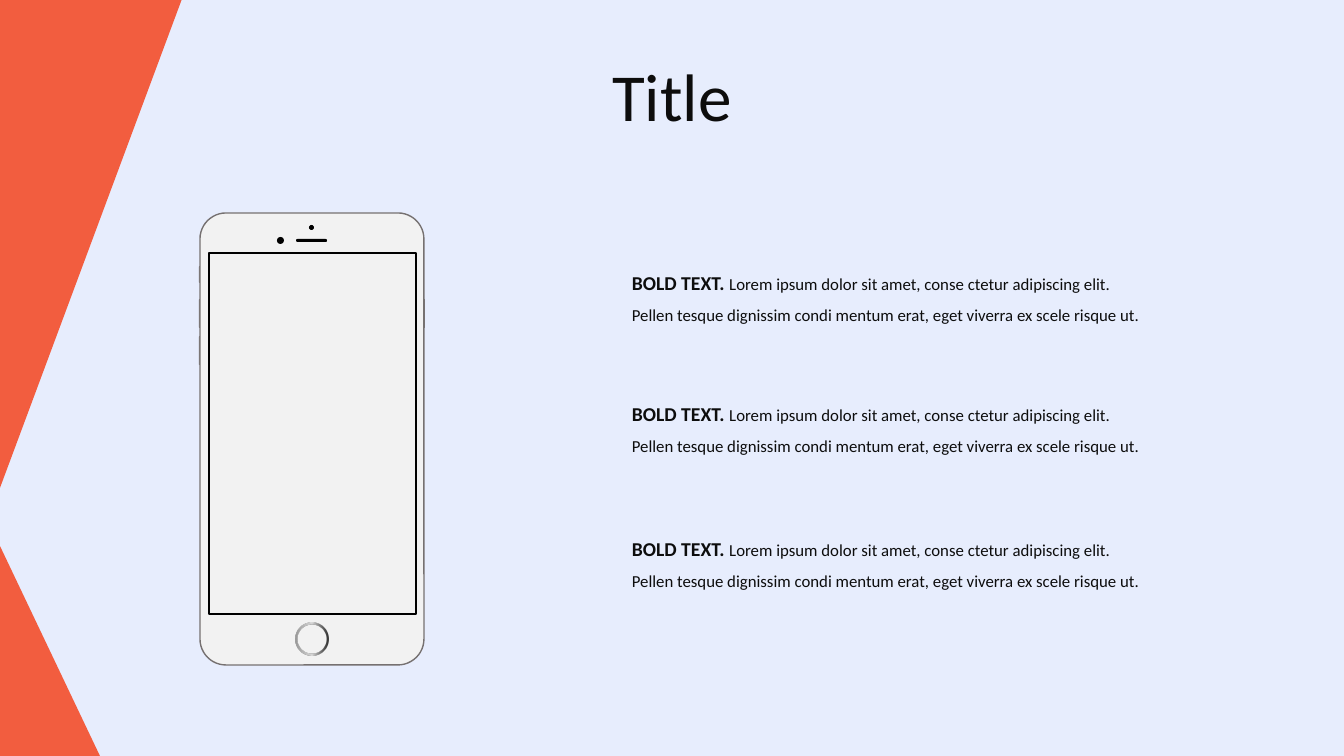
from lxml.etree import SubElement
from pptx import Presentation
from pptx.dml.color import RGBColor
from pptx.enum.shapes import MSO_SHAPE as SHAPE
from pptx.enum.text import MSO_ANCHOR as ANCHOR, MSO_AUTO_SIZE as AUTO_SIZE, PP_ALIGN as ALIGN
from pptx.oxml.ns import qn
from pptx.util import Pt

PX = 914400 / 100.8
CORAL, INK, BLACK = "F25D3F", "0D0D0D", "000000"
RIM, CASE = "767171", "F2F2F2"
LEAD = "BOLD TEXT. "
DETAIL = ("Lorem ipsum dolor sit amet, conse ctetur adipiscing elit. "
          "Pellen tesque dignissim condi mentum erat, eget viverra ex scele risque ut.")


def emu(*lengths):
    return [round(length * PX) for length in lengths]


def color(hex_string):
    return RGBColor.from_string(hex_string)


def draw(shapes, kind, box, fill=None, line=None, adjust=None):
    part = shapes.add_shape(kind, *emu(*box))
    part.shadow.inherit = False
    if fill:
        part.fill.solid()
        part.fill.fore_color.rgb = color(fill)
    else:
        part.fill.background()
    if line:
        part.line.color.rgb = color(line)
        part.line.width = Pt(1)
    else:
        part.line.fill.background()
    if adjust is not None:
        part.adjustments[0] = adjust
    return part


def write(paragraph, text, size, bold=False):
    run = paragraph.add_run()
    run.text = text
    looks = {"name": "Calibri", "size": Pt(size), "bold": bold}
    for key, value in looks.items():
        setattr(run.font, key, value)
    run.font.color.rgb = color(INK)


def shade(ring):
    ring.fill.gradient()
    ring.fill.gradient_angle = 0
    stops = ring._element.spPr.find(qn("a:gradFill")).find(qn("a:gsLst"))
    for stop in list(stops):
        stops.remove(stop)
    for percent, tone, opacity in ((0, "979797", 100), (50, "D7D7D7", 100), (100, BLACK, 80)):
        stop = SubElement(stops, qn("a:gs"), pos=str(percent * 1000))
        tint = SubElement(stop, qn("a:srgbClr"), val=tone)
        if opacity < 100:
            SubElement(tint, qn("a:alpha"), val=str(opacity * 1000))


def add_corners(slide, width, height):
    draw(slide.shapes, SHAPE.RIGHT_TRIANGLE, (0, height - 210, 100, 210), CORAL)
    upper = draw(slide.shapes, SHAPE.RIGHT_TRIANGLE, (0, -1, 182, 489), CORAL)
    upper._element.spPr.find(qn("a:xfrm")).set("flipV", "1")


def add_phone(slide, left, top, width, height):
    phone = slide.shapes.add_group_shape().shapes
    right = width - 2
    for x, y, length in ((-1, 53, 17), (-1, 86, 29), (-1, 123, 29), (right, 86, 29)):
        draw(phone, SHAPE.ROUNDED_RECTANGLE, (left + x, top + y, 3, length), RIM, adjust=0.3)
    draw(phone, SHAPE.ROUNDED_RECTANGLE, (left, top, width, height), CASE, RIM, 26 / width)
    for x, y, size in ((77, 24, 7), (109, 12, 5)):
        draw(phone, SHAPE.OVAL, (left + x, top + y, size, size), BLACK)
    draw(phone, SHAPE.ROUNDED_RECTANGLE, (left + 96, top + 26, 31, 3), BLACK, adjust=0.5)
    shade(draw(phone, SHAPE.DONUT, (left + 96, top + 410, 32, 32), CASE, adjust=0.07))
    draw(slide.shapes, SHAPE.RECTANGLE, (left + 9, top + 40, width - 17, 361), line=BLACK)


def add_title(slide, *box):
    title = slide.shapes.title
    title.left, title.top, title.width, title.height = emu(*box)
    layout = {"word_wrap": True, "auto_size": AUTO_SIZE.NONE, "vertical_anchor": ANCHOR.TOP}
    for key, value in layout.items():
        setattr(title.text_frame, key, value)
    heading = title.text_frame.paragraphs[0]
    heading.alignment = ALIGN.CENTER
    write(heading, "Title", 48)


def add_point(slide, *box):
    point = slide.shapes.add_textbox(*emu(*box)).text_frame
    point.word_wrap = True
    paragraph = point.paragraphs[0]
    paragraph.line_spacing = 1.5
    write(paragraph, LEAD, 14, True)
    write(paragraph, DETAIL, 12)


def main():
    deck = Presentation()
    width, height = 1344, 756
    deck.slide_width, deck.slide_height = emu(width, height)
    slide = deck.slides.add_slide(deck.slide_layouts[5])
    slide.background.fill.solid()
    slide.background.fill.fore_color.rgb = color("E7EDFD")
    add_corners(slide, width, height)
    add_phone(slide, 200, 213, 224, 452)
    add_title(slide, 308, 49, 728, 92)
    for top in (254, 385, 520):
        add_point(slide, 622, top, 542, 74)
    deck.save("out.pptx")


if __name__ == "__main__":
    main()
